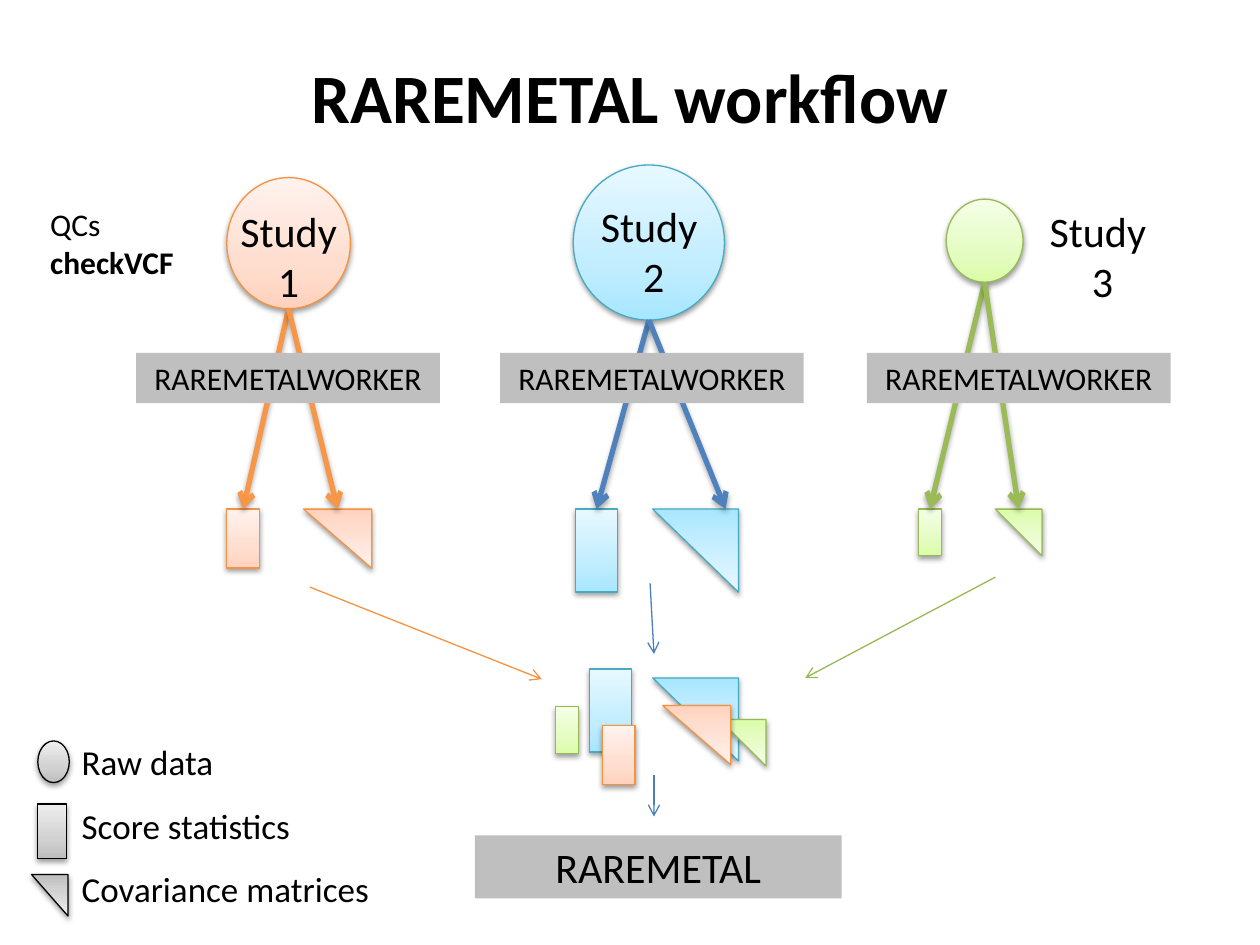
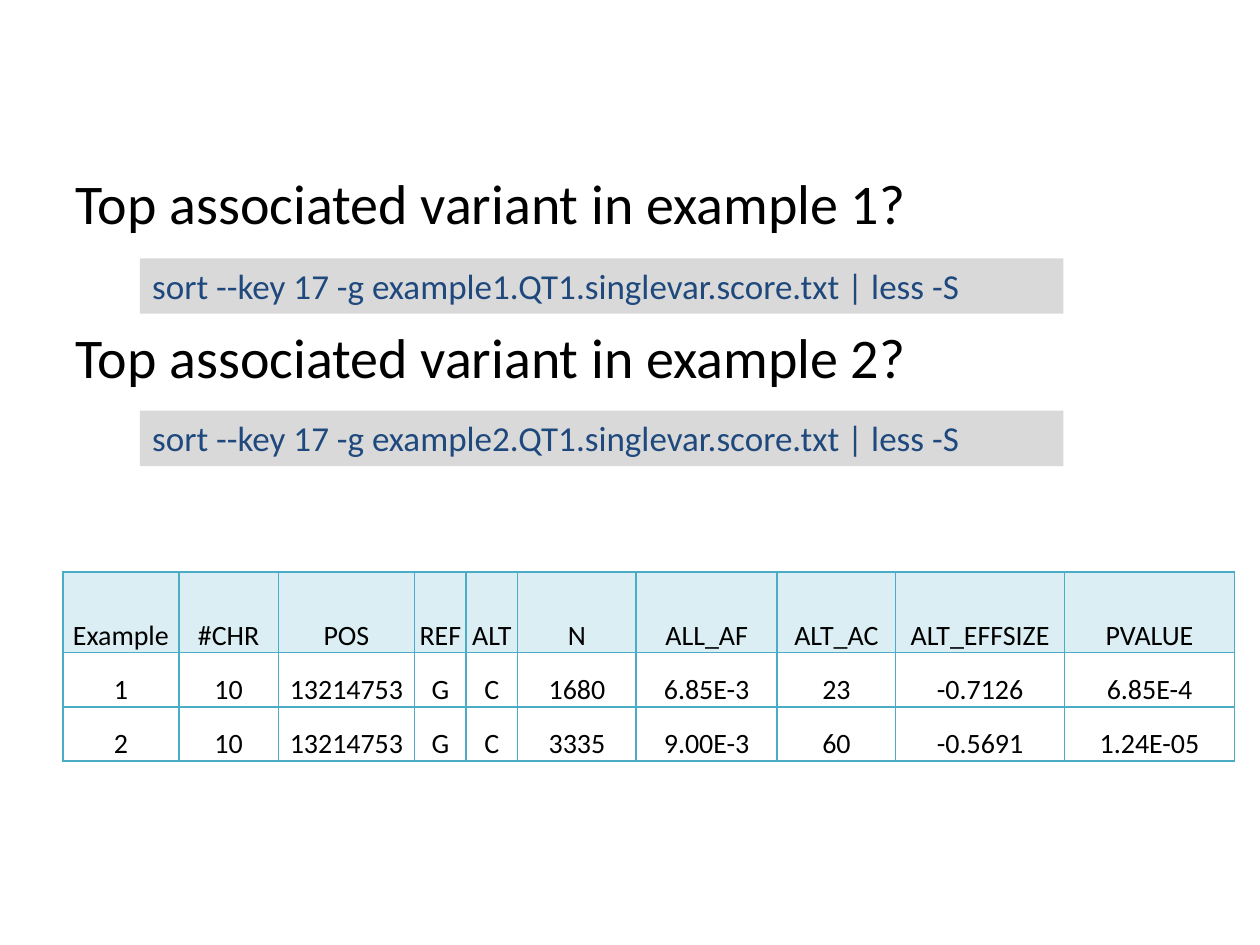
from collections import namedtuple
from copy import deepcopy
from dataclasses import dataclass

from lxml import etree
from pptx import Presentation
from pptx.dml.color import RGBColor
from pptx.enum import shapes, text
from pptx.oxml import ns
from pptx.util import Pt

# Stops run from dark to pale; edge is the outline, strong the heavy arrows, flow the thin ones
Hue = namedtuple("Hue", "stops edge strong flow")
Study = namedtuple("Study", "hue left dot label rect tri score cov aim")


@dataclass(frozen=True)
class Theme:
    font: str = "Calibri"
    ink: str = "000000"
    code: str = "1F497D"
    band: str = "BFBFBF"
    strip: str = "D9D9D9"
    head: str = "DBEEF4"
    grid: str = "4BACC6"
    title: float = 39.6
    body: float = 32
    large: float = 24
    mid: float = 20
    small: float = 18
    cell: float = 16
    orange: Hue = Hue(("FFD2BD", "FFDED0", "FFF2ED"), "F69240", "F79646", "F69240")
    blue: Hue = Hue(("A7E6FF", "C1EDFF", "E7F8FF"), "46AAC5", "4F81BD", "4B7EBC")
    green: Hue = Hue(("DAFDA7", "E4FCC2", "F5FFE7"), "98B955", "9BBB59", "98B955")
    gray: Hue = Hue(("BDBDBD", "D1D1D1", "EEEEEE"), "000000", "000000", "000000")


T = Theme()
KIND = shapes.MSO_SHAPE
MID = text.PP_ALIGN.CENTER

# Positions and sizes below are relative to the left edge of each study's lane
STUDIES = [
    Study(T.orange, 77.8, (51.8, 101.5, 70.6, 74.9), (51.8, 113.8, 70.6),
          (18.7, 33.8), (38.9, 33.8), 51.8, 95.7, 0.5),
    Study(T.blue, 285.8, (41.8, 94.3, 86.4, 88.6), (43.2, 110.9, 89.3),
          (23.8, 47.5), (49, 47.5), 43.2, 87.2, 0.85),
    Study(T.green, 495.4, (45.3, 113.8, 43.9, 47.5), (90, 113.8, 89.3),
          (13, 26.6), (26.6, 26.6), 29.5, 73.4, 0.5),
]


def rgb(code):
    return RGBColor.from_string(code)


def style(para, size, color=T.ink, bold=False, align=None):
    font = para.font
    font.name, font.size, font.bold = T.font, Pt(size), bold
    font.color.rgb = rgb(color)
    if align is not None:
        para.alignment = align


def sub(node, tag, **attrs):
    return etree.SubElement(node, ns.qn(tag), attrs)


def shade(shape, alpha, dist):
    fx = sub(shape._element.spPr, "a:effectLst")
    drop = sub(fx, "a:outerShdw", blurRad="40000", dist=str(dist),
               dir="5400000", rotWithShape="0")
    sub(sub(drop, "a:srgbClr", val=T.ink), "a:alpha", val=str(alpha * 1000))


def glyph(slide, kind, hue, x, y, w, h):
    """Gradient symbol; triangles have their right angle at the top right."""
    shape = slide.shapes.add_shape(kind, Pt(x), Pt(y), Pt(w), Pt(h))
    if kind == KIND.RIGHT_TRIANGLE:
        shape.rotation = 180
    fill = shape.fill
    fill.gradient()
    fill.gradient_angle = 90
    stops = shape._element.spPr.find(".//" + ns.qn("a:gsLst"))
    stops.insert(1, deepcopy(stops[0]))
    for stop, pos, color in zip(fill.gradient_stops, (0, 0.35, 1), hue.stops):
        stop.position = pos
        stop.color.rgb = rgb(color)
    shape.line.color.rgb = rgb(hue.edge)
    shape.line.width = Pt(0.75)
    shade(shape, 38, 20000)


def arrow(slide, start, end, color, width=0.75):
    line = slide.shapes.add_connector(
        shapes.MSO_CONNECTOR.STRAIGHT, *(Pt(v) for v in (*start, *end)))
    line.line.color.rgb = rgb(color)
    line.line.width = Pt(width)
    sub(line.line._get_or_add_ln(), "a:tailEnd", type="arrow")
    if width > 1:
        shade(line, 35, 23000)
    else:
        sub(line._element.spPr, "a:effectLst")


def label(slide, lines, x, y, w, h, size, fill=None, color=T.ink, align=None):
    box = slide.shapes.add_textbox(Pt(x), Pt(y), Pt(w), Pt(h))
    if fill:
        box.fill.solid()
        box.fill.fore_color.rgb = rgb(fill)
    frame = box.text_frame
    frame.word_wrap = True
    frame.text = "\n".join(lines)
    for para in frame.paragraphs:
        style(para, size, color, align=align)
    return frame


def lane(slide, num, study):
    """One study: raw data, worker band and its two results."""
    left, hue, top = study.left, study.hue, 290.9
    x, y, w, h = study.dot
    glyph(slide, KIND.OVAL, hue, left + x, y, w, h)
    x2, y2, w2 = study.label
    label(slide, ["Study ", str(num)], left + x2, y2, w2, 65.5, T.large, align=MID)
    score, cov = left + study.score, left + study.cov
    glyph(slide, KIND.RIGHT_TRIANGLE, hue, cov, top, *study.tri)
    glyph(slide, KIND.RECTANGLE, hue, score, top, *study.rect)
    foot = (left + x + w / 2, y + h)
    for aim in (score + study.rect[0] / 2, cov + study.tri[0] * study.aim):
        arrow(slide, foot, (aim, top), hue.strong, 3)
    label(slide, ["RAREMETALWORKER"], left, 201.6, 173.5, 28.8,
          T.small, T.band, align=MID)


def pool(slide, x, y):
    """Results of all studies brought together, then analysed."""
    one, two, three = STUDIES
    for study, rect, tri in ((two, (19.5, 0), (55.5, 5.1)),
                             (three, (0, 21.6), (93.6, 28.8)),
                             (one, (26.7, 32.4), (61.2, 20.9))):
        glyph(slide, KIND.RIGHT_TRIANGLE, study.hue, x + tri[0], y + tri[1], *study.tri)
        glyph(slide, KIND.RECTANGLE, study.hue, x + rect[0], y + rect[1], *study.rect)
    for hue, start, end in ((T.orange, (-140.4, -46.8), (-7.9, 5.8)),
                            (T.blue, (54, -48.9), (56.2, -8.6)),
                            (T.green, (251.3, -52.5), (142.6, 5.1)),
                            (T.blue, (56.2, 60.5), (56.2, 84.3))):
        arrow(slide, (x + start[0], y + start[1]), (x + end[0], y + end[1]), hue.flow)
    label(slide, ["RAREMETAL"], x - 46.1, y + 95.1, 209.5, 36,
          T.large, T.band, align=MID)


def legend(slide, x, y):
    rows = (("Raw data", KIND.OVAL, (3.6, 3.6, 18, 23.8)),
            ("Score statistics", KIND.RECTANGLE, (3.6, 3.4, 16.6, 31)),
            ("Covariance matrices", KIND.RIGHT_TRIANGLE, (0, 7.3, 20.9, 23.8)))
    for i, (name, kind, (dx, dy, w, h)) in enumerate(rows):
        top = y + i * 36.3
        glyph(slide, kind, T.gray, x + dx, top + dy, w, h)
        label(slide, [name], x + 21.6, top, 235, 31.7, T.mid)


def flow(deck):
    slide = deck.slides.add_slide(deck.slide_layouts[5])
    head = slide.shapes.title
    head.left, head.top, head.width, head.height = Pt(36), Pt(31), Pt(648), Pt(48)
    head.text_frame.text = "RAREMETAL workflow"
    head.text_frame.vertical_anchor = text.MSO_ANCHOR.MIDDLE
    style(head.text_frame.paragraphs[0], T.title, bold=True, align=MID)
    for num, study in enumerate(STUDIES, 1):
        lane(slide, num, study)
    checks = label(slide, ["QCs", "checkVCF"], 21.6, 113.8, 86.4, 51, T.small)
    checks.paragraphs[1].font.bold = True
    pool(slide, 317.5, 382.3)
    legend(slide, 18, 419.8)


def edge(cell):
    props = cell._tc.get_or_add_tcPr()
    for side in "LRTB":
        line = sub(props, "a:ln" + side, w="12700")
        sub(sub(line, "a:solidFill"), "a:srgbClr", val=T.grid)


def grid(slide, x, y):
    """Table of the top variant in each example."""
    rows = ("Example #CHR POS REF ALT N ALL_AF ALT_AC ALT_EFFSIZE PVALUE".split(),
            "1 10 13214753 G C 1680 6.85E-3 23 -0.7126 6.85E-4".split(),
            "2 10 13214753 G C 3335 9.00E-3 60 -0.5691 1.24E-05".split())
    cols = (66.2, 56.9, 77.8, 29.5, 29.5, 67.7, 80.6, 67.7, 96.5, 97.2)
    high = (46.1, 31, 31)
    table = slide.shapes.add_table(len(rows), len(cols), Pt(x), Pt(y),
                                   Pt(sum(cols)), Pt(sum(high))).table
    table.first_row = table.horz_banding = False
    for col, w in zip(table.columns, cols):
        col.width = Pt(w)
    for r, (row, h) in enumerate(zip(rows, high)):
        table.rows[r].height = Pt(h)
        for c, value in enumerate(row):
            cell = table.cell(r, c)
            cell.text = value
            cell.vertical_anchor = text.MSO_ANCHOR.BOTTOM
            cell.margin_left = cell.margin_right = cell.margin_top = Pt(0.7)
            cell.margin_bottom = 0
            edge(cell)
            if r:
                cell.fill.background()
            else:
                cell.fill.solid()
                cell.fill.fore_color.rgb = rgb(T.head)
            style(cell.text_frame.paragraphs[0], T.cell, align=MID)


def quiz(deck):
    slide = deck.slides.add_slide(deck.slide_layouts[1])
    head = slide.shapes.title._element
    head.getparent().remove(head)
    body = slide.placeholders[1]
    body.left, body.top, body.width, body.height = Pt(36), Pt(92.9), Pt(648), Pt(389.5)
    body.text_frame.text = "\n".join(
        f"Top associated variant in example {n}?" for n in (1, 2))
    for para, gap in zip(body.text_frame.paragraphs, (0, 49.5)):
        para.space_before = Pt(gap)
        props = para._p.get_or_add_pPr()
        props.set("marL", "0")
        props.set("indent", "0")
        sub(props, "a:buNone")
        style(para, T.body)
    grid(slide, 36, 326.9)
    # Commands that answer each question
    for n in (1, 2):
        label(slide, [f"sort --key 17 -g example{n}.QT1.singlevar.score.txt | less -S"],
              79.9, 60.5 + n * 87.1, 527.8, 31.7, T.mid, T.strip, T.code)


def main():
    deck = Presentation()
    deck.slide_width, deck.slide_height = Pt(720), Pt(540)
    flow(deck)
    quiz(deck)
    deck.save("out.pptx")


if __name__ == "__main__":
    main()
